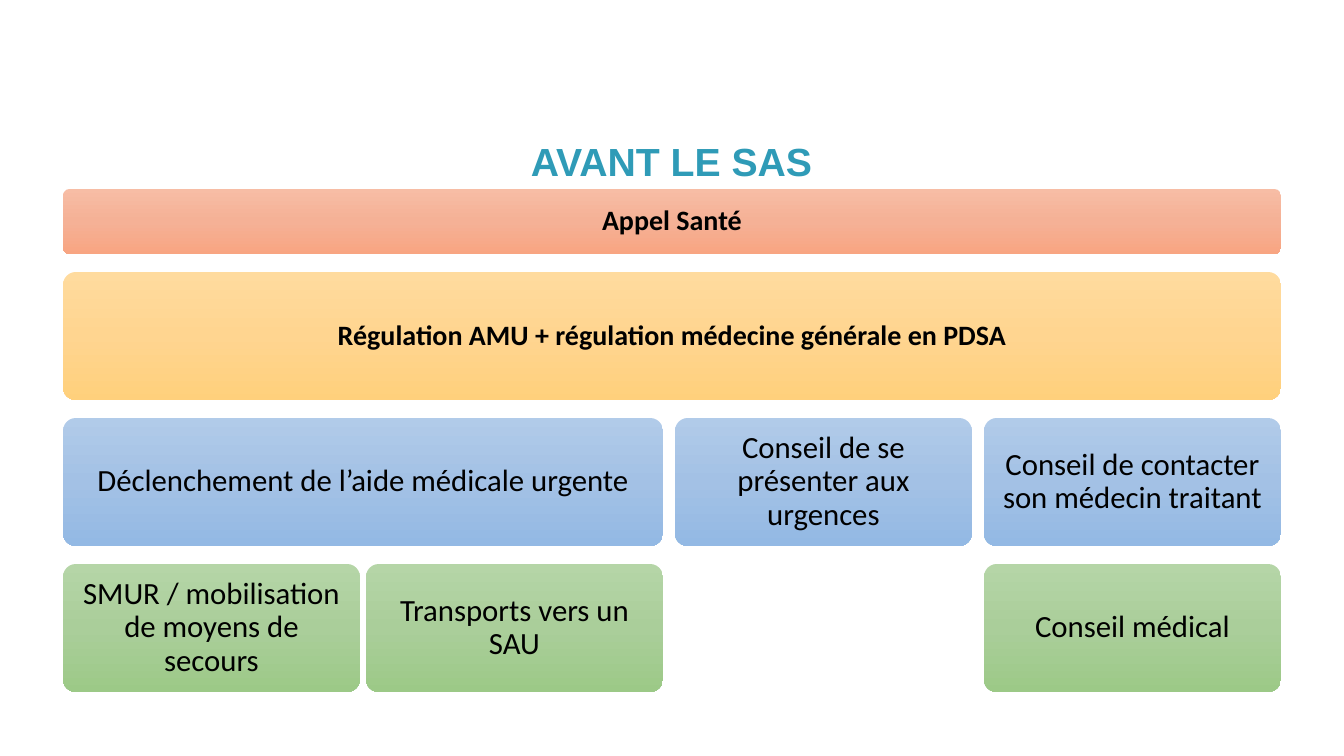
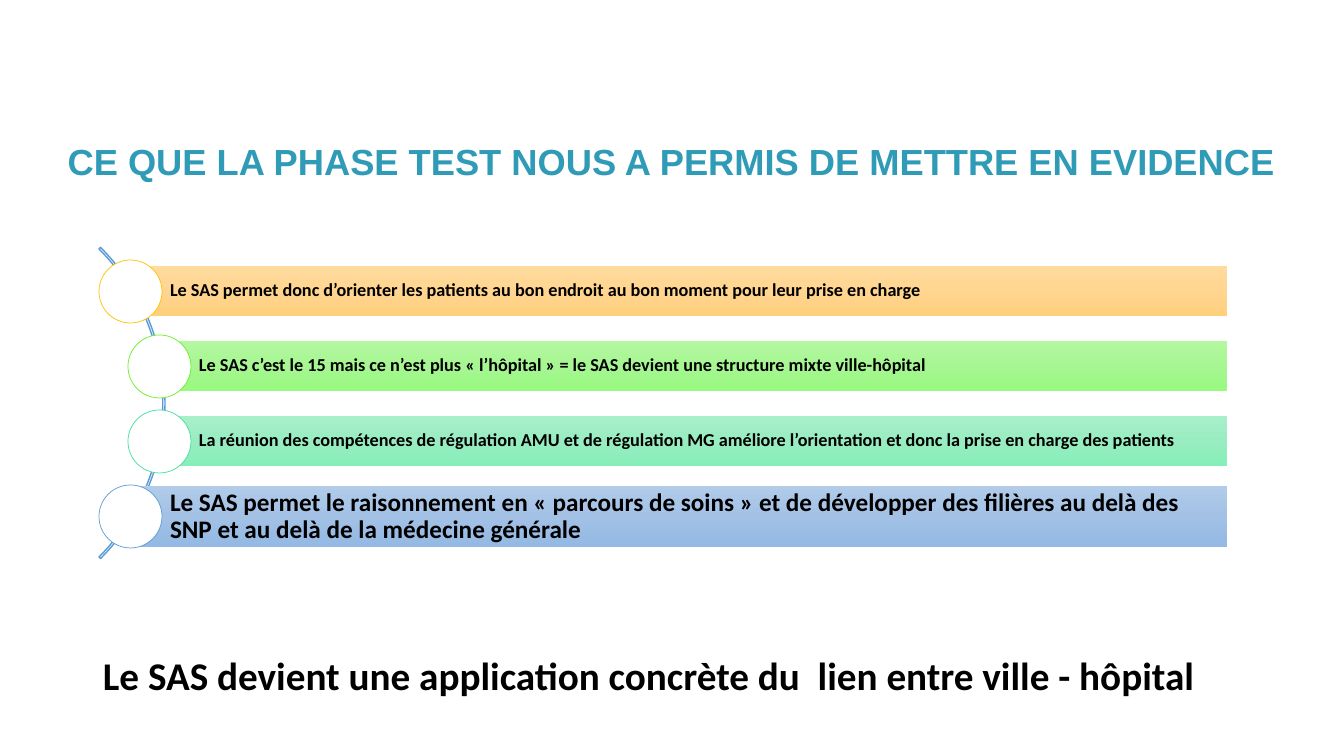
from copy import deepcopy
from dataclasses import dataclass

from pptx import Presentation
from pptx.dml.color import RGBColor
from pptx.enum.shapes import MSO_SHAPE as Preset
from pptx.enum.text import MSO_ANCHOR as Anchor, MSO_AUTO_SIZE as AutoSize, PP_ALIGN as Align
from pptx.oxml.ns import qn
from pptx.util import Pt

SLIDE_W, SLIDE_H = 1344, 756  # px
SCALE = 12192000 / SLIDE_W    # EMU per px


@dataclass(frozen=True)
class Theme:
    title_font: str = "Arial"
    body_font: str = "Calibri"
    title: str = "2F9BB7"
    text: str = "000000"
    white: str = "FFFFFF"
    arc: str = "5B9BD5"
    # gradients, top to bottom
    salmon: tuple = ("F7BDA5", "F5B196", "F8A582")
    amber: tuple = ("FFDB9E", "FFD590", "FFD07C")
    blue: tuple = ("B1CBE9", "A3C1E5", "93B9E4")
    green: tuple = ("B5D5A7", "AACE9A", "9CC987")
    lime: tuple = ("B3F8A1", "A7F693", "98FA7E")
    mint: tuple = ("A8F0CA", "99ECC1", "86EEB9")
    # type sizes
    stage_size: int = 20
    step_size: int = 22
    finding_size: int = 13
    key_size: int = 18
    closing_size: int = 28


THEME = Theme()

# Content: title and its size
BEFORE_TITLE = ("AVANT LE SAS", 28)
FINDINGS_TITLE = ("CE QUE LA PHASE TEST NOUS A PERMIS DE METTRE EN EVIDENCE", 25.9)

# Rows: height, gradient, size, bold, cells as (first column, last column, text)
CARE_ROWS = [
    (65, THEME.salmon, THEME.stage_size, True, [(0, 3, "Appel Santé")]),
    (128, THEME.amber, THEME.stage_size, True,
     [(0, 3, "Régulation AMU + régulation médecine générale en PDSA")]),
    (128, THEME.blue, THEME.step_size, False,
     [(0, 1, "Déclenchement de l’aide médicale urgente"),
      (2, 2, "Conseil de se présenter aux urgences"),
      (3, 3, "Conseil de contacter son médecin traitant")]),
    (128, THEME.green, THEME.step_size, False,
     [(0, 0, "SMUR / mobilisation de moyens de secours"),
      (1, 1, "Transports vers un SAU"),
      (3, 3, "Conseil médical")]),
]

# Findings: bar left, bar height, gradient, ring colour, size, text
FINDINGS = [
    (130, 50, THEME.amber, "FFC000", THEME.finding_size,
     "Le SAS permet donc d’orienter les patients au bon endroit au bon moment "
     "pour leur prise en charge"),
    (159, 50, THEME.lime, "67EF21", THEME.finding_size,
     "Le SAS c’est le 15 mais ce n’est plus « l’hôpital » = le SAS devient "
     "une structure mixte ville-hôpital"),
    (159, 50, THEME.mint, "3FE19B", THEME.finding_size,
     "La réunion des compétences de régulation AMU et de régulation MG améliore "
     "l’orientation et donc la prise en charge des patients"),
    (130, 61, THEME.blue, THEME.arc, THEME.key_size,
     "Le SAS permet le raisonnement en « parcours de soins » et de développer "
     "des filières au delà des SNP et au delà de la médecine générale"),
]
CLOSING = "Le SAS devient une application concrète du  lien entre ville - hôpital"

# Layout, px
TITLE_BOX = (32, 141, 1279, 48)
COLUMN_W = 297
COLUMN_GAPS = (6, 12, 12)
GRID_LEFT, GRID_TOP, ROW_GAP = 63, 189, 18
FIRST_Y, FINDING_PITCH, BAR_RIGHT, RING = 291, 75, 1227, 63
ARC_BOX = (-275, 183, 440, 440)
CLOSING_BOX = (93, 646, 1158, 57)


def px(length):
    return round(length * SCALE)


def place(box):
    return [px(length) for length in box]


def rgb(colour):
    return RGBColor.from_string(colour)


def write(frame, text, size, colour=THEME.text, font=THEME.body_font, bold=True,
          align=Align.LEFT, spacing=0.9, insets=(10, 5, 10, 5), anchor=Anchor.MIDDLE):
    frame.word_wrap = True
    frame.auto_size = AutoSize.NONE
    frame.vertical_anchor = anchor
    frame.margin_left, frame.margin_top, frame.margin_right, frame.margin_bottom = place(insets)
    paragraph = frame.paragraphs[0]
    paragraph.alignment = align
    paragraph.line_spacing = spacing
    run = paragraph.add_run()
    run.text = text
    run.font.name, run.font.size, run.font.bold = font, Pt(size), bold
    run.font.color.rgb = rgb(colour)


def add_preset(slide, preset, box, fill=None, line=None, line_width=1):
    """Add a preset; fill is None, one colour or three gradient colours."""
    shape = slide.shapes.add_shape(preset, *place(box))
    shape.shadow.inherit = False
    if fill is None:
        shape.fill.background()
    elif isinstance(fill, str):
        shape.fill.solid()
        shape.fill.fore_color.rgb = rgb(fill)
    else:
        shape.fill.gradient()
        shape.fill.gradient_angle = 270
        stops = shape.element.spPr.find(qn("a:gradFill")).find(qn("a:gsLst"))
        stops.insert(1, deepcopy(stops[0]))
        for stop, colour, position in zip(shape.fill.gradient_stops, fill, (0, 0.5, 1)):
            stop.color.rgb = rgb(colour)
            stop.position = position
    if line:
        shape.line.color.rgb = rgb(line)
        shape.line.width = Pt(line_width)
    else:
        shape.line.fill.background()
    return shape


def add_titled_slide(deck, text, size):
    slide = deck.slides.add_slide(deck.slide_layouts[5])
    title = slide.shapes.title
    title.left, title.top, title.width, title.height = place(TITLE_BOX)
    write(title.text_frame, text, size, THEME.title, THEME.title_font,
          align=Align.CENTER, spacing=0.8)
    return slide


def build_before(deck):
    slide = add_titled_slide(deck, *BEFORE_TITLE)
    lefts = [GRID_LEFT + i * COLUMN_W + sum(COLUMN_GAPS[:i]) for i in range(4)]
    top = GRID_TOP
    for height, gradient, size, bold, cells in CARE_ROWS:
        for first, last, text in cells:
            width = lefts[last] + COLUMN_W - lefts[first]
            block = add_preset(slide, Preset.ROUNDED_RECTANGLE,
                               (lefts[first], top, width, height), gradient)
            block.adjustments[0] = 0.1
            write(block.text_frame, text, size, bold=bold, align=Align.CENTER,
                  insets=(13, 10, 13, 10))
        top += height + ROW_GAP


def build_findings(deck):
    slide = add_titled_slide(deck, *FINDINGS_TITLE)

    # Arc behind the rings, from 315 to 45 degrees
    arc = add_preset(slide, Preset.BLOCK_ARC, ARC_BOX, line=THEME.arc)
    for i, value in enumerate((189, 27, 0.005)):
        arc.adjustments[i] = value

    # Each bar starts at the centre of its ring
    for i, (left, height, gradient, ring_colour, size, text) in enumerate(FINDINGS):
        middle = FIRST_Y + i * FINDING_PITCH
        bar = add_preset(slide, Preset.RECTANGLE,
                         (left, middle - height // 2, BAR_RIGHT - left, height), gradient)
        write(bar.text_frame, text, size, insets=(40, 4, 4, 4))
        add_preset(slide, Preset.OVAL, (left - RING // 2, middle - RING // 2, RING, RING),
                   THEME.white, ring_colour, 0.5)

    # Closing statement
    closing = slide.shapes.add_textbox(*place(CLOSING_BOX))
    write(closing.text_frame, CLOSING, THEME.closing_size, spacing=1, anchor=Anchor.TOP)


def main():
    deck = Presentation()
    deck.slide_width, deck.slide_height = px(SLIDE_W), px(SLIDE_H)
    build_before(deck)
    build_findings(deck)
    deck.save("out.pptx")


if __name__ == "__main__":
    main()
